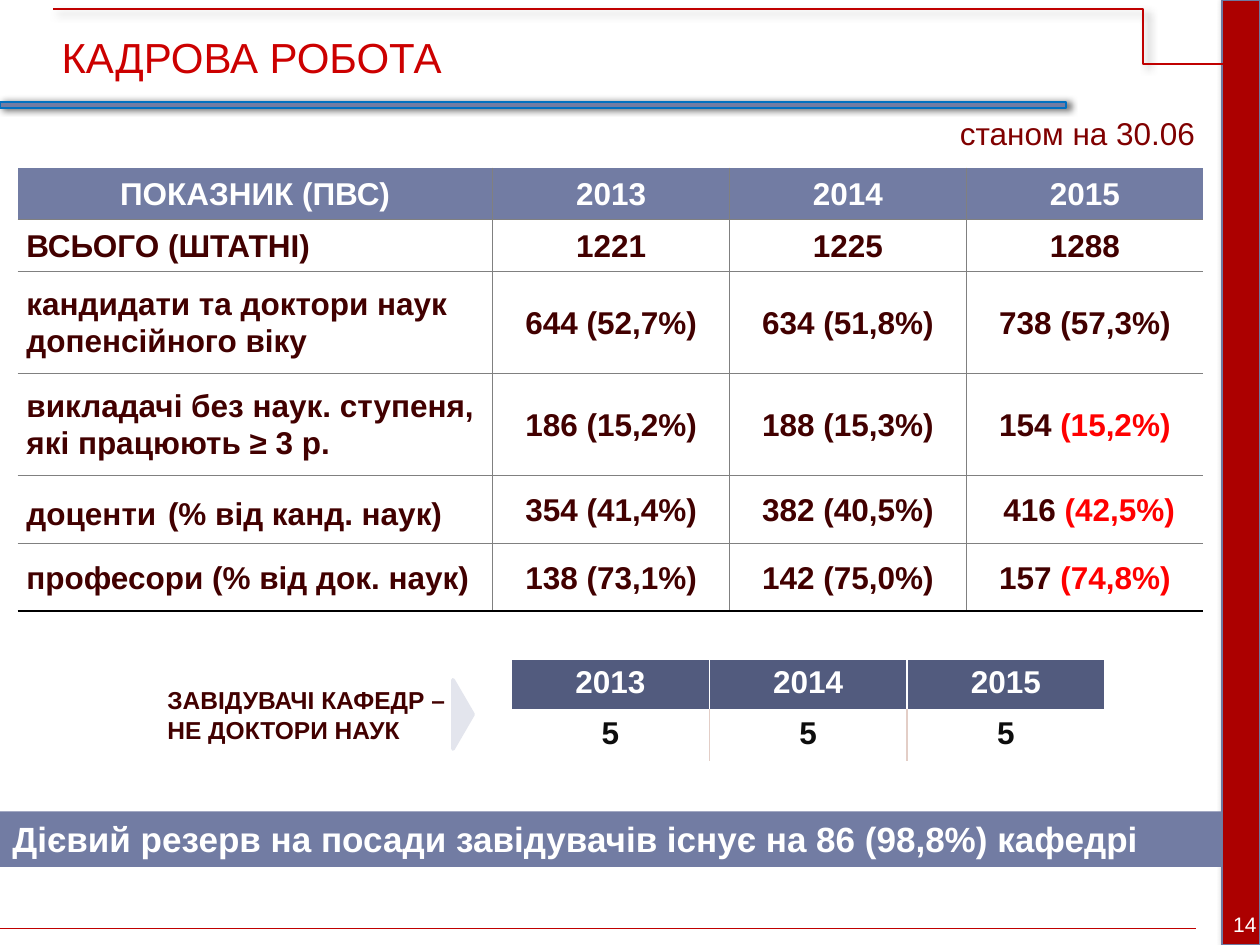
from lxml import etree
from pptx import Presentation
from pptx.dml.color import RGBColor
from pptx.enum.shapes import MSO_CONNECTOR, MSO_SHAPE
from pptx.enum.text import MSO_ANCHOR, MSO_AUTO_SIZE, PP_ALIGN
from pptx.oxml.ns import qn
from pptx.util import Inches, Pt

RECT, TRI, BRACKET = MSO_SHAPE.RECTANGLE, MSO_SHAPE.ISOSCELES_TRIANGLE, MSO_SHAPE.DOUBLE_BRACKET
STRAIGHT, ELBOW = MSO_CONNECTOR.STRAIGHT, MSO_CONNECTOR.ELBOW
LEFT, CENTER = PP_ALIGN.LEFT, PP_ALIGN.CENTER
TOP, MIDDLE = MSO_ANCHOR.TOP, MSO_ANCHOR.MIDDLE
GROW = MSO_AUTO_SIZE.SHAPE_TO_FIT_TEXT

COLORS = {
    "white": "FFFFFF", "black": "000000", "ink": "0D0D0D", "grid": "808080",
    "bar": "AC0000", "edge": "6E79A1", "slate": "727CA3", "navy": "525B7E",
    "blue": "0070C0", "line": "C00000", "title": "CC0000", "date": "800000",
    "brown": "420000", "red": "FF0000", "pale": "E3E5ED", "rose": "E3CEC7",
}

YEARS = ["2013", "2014", "2015"]
# Each cell is a list of (text, color, size) runs or a plain string.
STAFF = [
    ["ПОКАЗНИК (ПВС)"] + YEARS,
    ["ВСЬОГО (ШТАТНІ)", "1221", "1225", "1288"],
    ["кандидати та доктори наук  допенсійного віку",
     "644 (52,7%)", "634 (51,8%)", "738 (57,3%)"],
    ["викладачі без наук. ступеня, \vякі працюють ≥ 3 р.",
     "186 (15,2%)", "188 (15,3%)", [("154", "brown", 18), (" (15,2%)", "red", 18)]],
    [[("доценти", "brown", 18), (" ", "brown", 24), ("(% від канд. наук)", "brown", 18)],
     "354 (41,4%)", "382 (40,5%)", [(" 416 ", "brown", 18), ("(42,5%)", "red", 18)]],
    ["професори (% від док. наук)",
     "138 (73,1%)", "142 (75,0%)", [("157 ", "brown", 18), ("(74,8%)", "red", 18)]],
]
HEADS = [YEARS, ["5"] * 3]


def rgb(name):
    return RGBColor.from_string(COLORS[name])


def style(font, size, color, bold):
    font.name, font.size, font.bold = "Arial", Pt(size), bold
    font.color.rgb = rgb(color)


def write(frame, text, size, color, bold=False, align=LEFT):
    para = frame.paragraphs[0]
    para.alignment = align
    if isinstance(text, str):
        para.text = text
        for run in para.runs:
            style(run.font, size, color, bold)
        return
    for part, tint, points in text:
        run = para.add_run()
        run.text = part
        style(run.font, points, tint, bold)


def shade(shape, alpha=None, dist=2, angle=0):
    """Set an outer shadow, or none when alpha is missing."""
    props = shape._element.spPr
    effects = etree.SubElement(props, qn("a:effectLst"))
    if alpha is None:
        return
    outer = etree.SubElement(effects, qn("a:outerShdw"), blurRad=str(Pt(4)),
                             dist=str(Pt(dist)), dir=str(angle * 60000),
                             algn="ctr", rotWithShape="0")
    tint = etree.SubElement(outer, qn("a:srgbClr"), val=COLORS["black"])
    etree.SubElement(tint, qn("a:alpha"), val=str(alpha * 1000))


def add_box(slide, kind, at, fill=None, line=None, width=1):
    box = slide.shapes.add_shape(kind, *map(Inches, at))
    if fill:
        box.fill.solid()
        box.fill.fore_color.rgb = rgb(fill)
    else:
        box.fill.background()
    if line:
        box.line.color.rgb = rgb(line)
        box.line.width = Pt(width)
    else:
        box.line.fill.background()
    return box


def add_text(slide, at, text, size, color, bold=False):
    frame = slide.shapes.add_textbox(*map(Inches, at)).text_frame
    frame.word_wrap, frame.auto_size = True, GROW
    write(frame, text, size, color, bold)


def add_line(slide, kind, ends):
    line = slide.shapes.add_connector(kind, *map(Inches, ends))
    line.line.color.rgb, line.line.width = rgb("line"), Pt(1)
    return line


def add_edge(cell, side, color, width):
    """Draw one cell border; no color means no border."""
    props = cell._tc.get_or_add_tcPr()
    edge = etree.SubElement(props, qn("a:ln" + side), w=str(Pt(width)))
    if color:
        fill = etree.SubElement(edge, qn("a:solidFill"))
        etree.SubElement(fill, qn("a:srgbClr"), val=COLORS[color])
    else:
        etree.SubElement(edge, qn("a:noFill"))


def add_table(slide, at, cols, rows, data, paint):
    """Build a table and let paint(cell, text, row, col) finish each cell."""
    size = (sum(cols), sum(rows))
    table = slide.shapes.add_table(len(rows), len(cols), *map(Inches, at + size)).table
    table.first_row = table.horz_banding = False
    for col, width in zip(table.columns, cols):
        col.width = Inches(width)
    for row, height in zip(table.rows, rows):
        row.height = Inches(height)
    for r, line in enumerate(data):
        for c, text in enumerate(line):
            paint(table.cell(r, c), text, r, c)


def paint_staff(cell, text, row, col):
    last = row == len(STAFF) - 1
    add_edge(cell, "L", "grid" if col else None, 0.25)
    add_edge(cell, "R", "grid" if col < 3 else None, 0.25)
    add_edge(cell, "T", "grid" if row else None, 0.25)
    add_edge(cell, "B", "black" if last else "grid", 1 if last else 0.25)
    if row:
        cell.fill.background()
    else:
        cell.fill.solid()
        cell.fill.fore_color.rgb = rgb("slate")
    cell.margin_left = cell.margin_right = Inches(0.07)
    cell.margin_top = cell.margin_bottom = 0
    cell.vertical_anchor = MIDDLE
    write(cell.text_frame, text, 18, "brown" if row else "white", True,
          LEFT if row and not col else CENTER)
    cell.text_frame.paragraphs[0].line_spacing = 1.07


def paint_heads(cell, text, row, col):
    add_edge(cell, "L", "rose" if row and col else "white", 1)
    add_edge(cell, "R", "rose" if row and col < 2 else "white", 1)
    add_edge(cell, "T", "white", 1)
    add_edge(cell, "B", "white", 1)
    cell.fill.solid()
    cell.fill.fore_color.rgb = rgb("white" if row else "navy")
    write(cell.text_frame, text, 18, "ink" if row else "white", True, CENTER)


def add_frame(slide):
    """Draw the side bar, the rules and the page number."""
    shade(add_box(slide, RECT, (9.7, 0, 0.3, 7.5), "bar", "edge"), 60)
    shade(add_box(slide, RECT, (0, 0.81, 8.46, 0.05), "slate", "blue"), 60)
    bent = add_line(slide, ELBOW, (9.71, 0.51, 0.42, 0.07))
    guides = bent._element.spPr.find(qn("a:prstGeom")).find(qn("a:avLst"))
    etree.SubElement(guides, qn("a:gd"), name="adj1", fmla="val 6900")
    shade(bent, 40, 3, 45)
    shade(add_line(slide, STRAIGHT, (0, 7.37, 9.49, 7.37)))
    page = add_box(slide, BRACKET, (9.58, 7.12, 0.6, 0.43))
    page.shadow.inherit = False
    frame = page.text_frame
    frame.margin_left = frame.margin_right = frame.margin_top = frame.margin_bottom = 0
    frame.vertical_anchor = MIDDLE
    write(frame, "14", 12, "white", align=CENTER)


def add_band(slide):
    band = add_box(slide, RECT, (0, 6.44, 9.7, 0.44), "slate")
    band.shadow.inherit = False
    frame = band.text_frame
    frame.word_wrap, frame.auto_size, frame.vertical_anchor = True, GROW, TOP
    write(frame, "Дієвий резерв на посади завідувачів існує на 86 (98,8%) кафедрі",
          20, "white", True)


def main():
    deck = Presentation()
    deck.slide_width, deck.slide_height = Inches(10), Inches(7.5)
    slide = deck.slides.add_slide(deck.slide_layouts[6])
    add_frame(slide)
    add_text(slide, (1.23, 5.39, 2.42, 0.57), "ЗАВІДУВАЧІ КАФЕДР – НЕ ДОКТОРИ НАУК",
             14, "brown", True)
    add_table(slide, (4.06, 5.23), (1.57,) * 3, (0.4,) * 2, HEADS, paint_heads)
    add_band(slide)
    add_table(slide, (0.14, 1.33), (3.77,) + (1.88,) * 3,
              (0.41, 0.41, 0.81, 0.81, 0.54, 0.54), STAFF, paint_staff)
    arrow = add_box(slide, TRI, (3.4, 5.59, 0.55, 0.16), "pale", "pale", 2)
    arrow.rotation = 90
    arrow.shadow.inherit = False
    add_text(slide, (0.39, 0.2, 8.2, 0.5), "КАДРОВА РОБОТА", 24, "title")
    add_text(slide, (7.52, 0.86, 2.11, 0.4), "станом на 30.06", 18, "date")
    deck.save("out.pptx")


if __name__ == "__main__":
    main()
